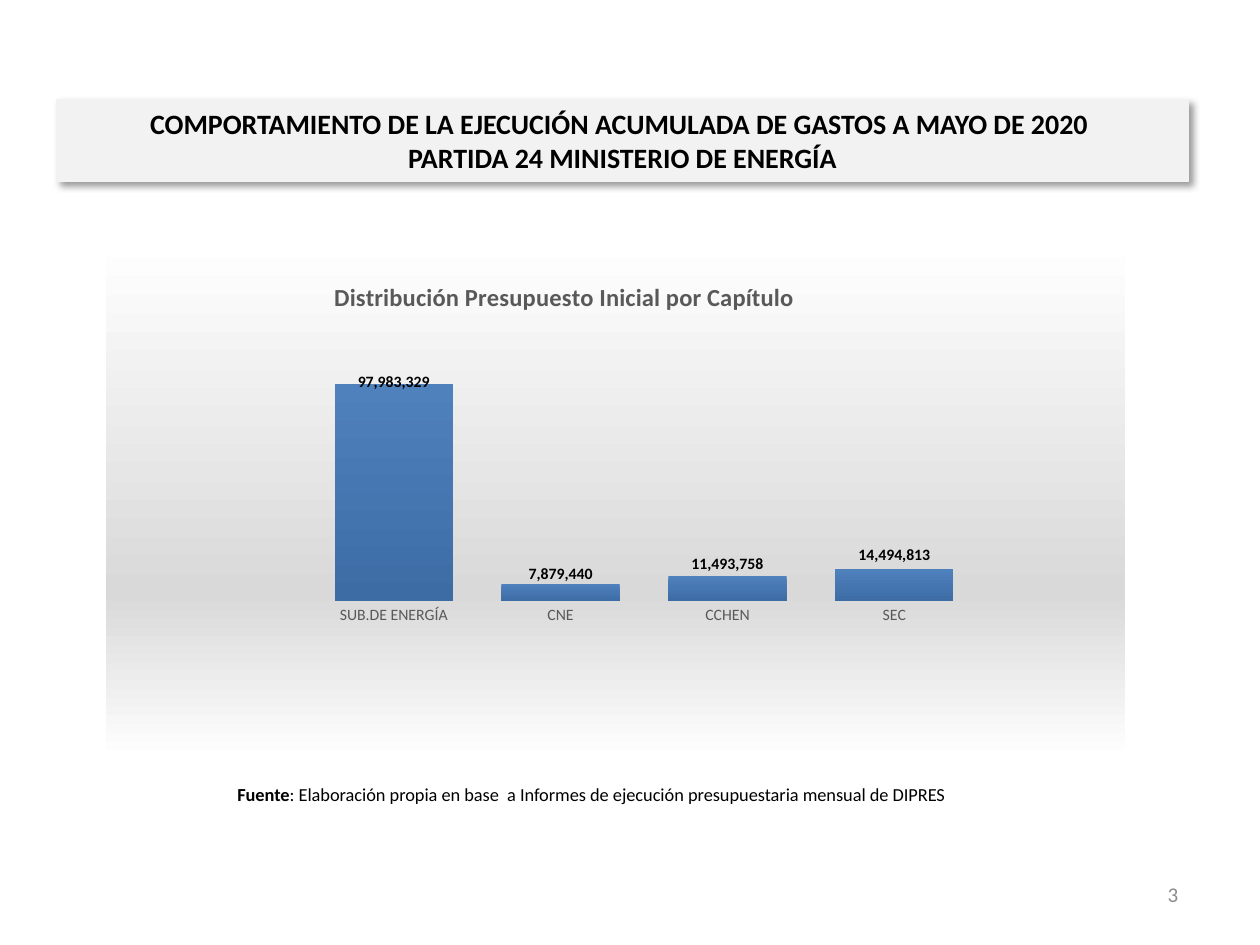
from lxml import etree
from pptx import Presentation
from pptx.chart.data import CategoryChartData
from pptx.dml.color import RGBColor
from pptx.enum.chart import XL_CHART_TYPE, XL_LABEL_POSITION, XL_TICK_MARK
from pptx.enum.shapes import MSO_SHAPE
from pptx.enum.text import MSO_ANCHOR, PP_ALIGN
from pptx.oxml import parse_xml
from pptx.oxml.ns import nsdecls, qn
from pptx.util import Inches, Pt


def style(font, size, color, bold=False):
    font.name = "Calibri"
    font.size = Pt(size)
    font.bold = bold
    font.color.rgb = RGBColor.from_string(color)


def set_layout(parent, index, **values):
    for old in parent.findall(qn("c:layout")):
        parent.remove(old)
    layout = etree.Element(qn("c:layout"))
    manual = etree.SubElement(layout, qn("c:manualLayout"))
    for tag, value in values.items():
        etree.SubElement(manual, qn(f"c:{tag}")).set("val", str(value))
    parent.insert(index, layout)


prs = Presentation()
prs.slide_width, prs.slide_height = Inches(10), Inches(7.5)
slide = prs.slides.add_slide(prs.slide_layouts[6])

heading = slide.shapes.add_shape(
    MSO_SHAPE.RECTANGLE, Inches(0.45), Inches(0.79), Inches(8.98), Inches(0.65))
heading.fill.solid()
heading.fill.fore_color.rgb = RGBColor.from_string("F2F2F2")
heading.line.color.rgb = RGBColor.from_string("F2F2F2")
heading.line.width = Pt(0.75)
heading._element.spPr.append(parse_xml(
    f'<a:effectLst {nsdecls("a")}><a:outerShdw blurRad="50800" dist="38100" dir="2700000" '
    'algn="tl" rotWithShape="0"><a:srgbClr val="000000"><a:alpha val="40000"/></a:srgbClr>'
    '</a:outerShdw></a:effectLst>'))
heading.text_frame.word_wrap = True
heading.text_frame.vertical_anchor = MSO_ANCHOR.MIDDLE
heading.text_frame.margin_left = heading.text_frame.margin_right = Inches(0.11)
heading_paragraph = heading.text_frame.paragraphs[0]
heading_paragraph.alignment = PP_ALIGN.CENTER
heading_lines = ["COMPORTAMIENTO DE LA EJECUCIÓN ACUMULADA DE GASTOS A MAYO DE 2020 ",
                 "PARTIDA 24 MINISTERIO DE ENERGÍA"]
for number, line in enumerate(heading_lines):
    if number:
        heading_paragraph.add_line_break()
    run = heading_paragraph.add_run()
    run.text = line
    style(run.font, 16, "000000", True)

captions = [
    (7.12, 6.9, 2.33, PP_ALIGN.RIGHT, 12, "8C8C8C", [("3", False)]),
    (0.98, 6.1, 7.43, PP_ALIGN.CENTER, 10.5, "000000", [
        ("Fuente", True),
        (": Elaboración propia en base  a Informes de ejecución presupuestaria mensual de DIPRES",
         False)]),
]
for left, top, width, alignment, size, color, pieces in captions:
    caption = slide.shapes.add_textbox(Inches(left), Inches(top), Inches(width), Inches(0.4))
    caption.text_frame.word_wrap = True
    caption.text_frame.vertical_anchor = MSO_ANCHOR.MIDDLE
    paragraph = caption.text_frame.paragraphs[0]
    paragraph.alignment = alignment
    for text, bold in pieces:
        run = paragraph.add_run()
        run.text = text
        style(run.font, size, color, bold)

budget = CategoryChartData(number_format="#,##0")
budget.categories = ["SUB.DE ENERGÍA", "CNE", "CCHEN", "SEC"]
budget.add_series("Series 1", [97983329, 7879440, 11493758, 14494813])
chart = slide.shapes.add_chart(
    XL_CHART_TYPE.COLUMN_CLUSTERED, Inches(0.83), Inches(1.89), Inches(8.11), Inches(4.14),
    budget).chart
style(chart.font, 10, "000000")
chart.has_legend = False
chart.has_title = True
chart_title = chart.chart_title.text_frame.paragraphs[0].add_run()
chart_title.text = "Distribución Presupuesto Inicial por Capítulo"
style(chart_title.font, 14, "595959", True)
set_layout(chart.chart_title._element, 1, xMode="edge", yMode="edge", x=0.22, y=0.07)

chart_root = chart._chartSpace
set_layout(chart_root.chart.plotArea, 0, layoutTarget="inner", xMode="edge", yMode="edge",
           x=0.201, y=0.186, w=0.654, h=0.511)
background = parse_xml(
    f'<c:spPr {nsdecls("c", "a")}><a:gradFill><a:gsLst>'
    '<a:gs pos="0"><a:srgbClr val="FFFFFF"/></a:gs>'
    '<a:gs pos="68000"><a:srgbClr val="D9D9D9"/></a:gs>'
    '<a:gs pos="100000"><a:srgbClr val="FFFFFF"/></a:gs></a:gsLst>'
    '<a:lin ang="5400000" scaled="0"/></a:gradFill>'
    '<a:ln w="9525"><a:solidFill><a:srgbClr val="FFFFFF"/></a:solidFill></a:ln></c:spPr>')
chart_root.chart.addnext(background)

chapters = chart.category_axis
chapters.major_tick_mark = XL_TICK_MARK.NONE
chapters.format.line.fill.background()
style(chapters.tick_labels.font, 9, "595959")
amounts = chart.value_axis
amounts.visible = False
amounts.has_major_gridlines = False
amounts.minimum_scale, amounts.maximum_scale = 0, 120000000

plot = chart.plots[0]
plot.gap_width = 41
plot.vary_by_categories = False
spending = plot.series[0]
bar_fill = spending.format.fill
bar_fill.gradient()
bar_fill.gradient_angle = 270
for stop, color in zip(bar_fill.gradient_stops, ["4F81BD", "3D6CA4"]):
    stop.color.rgb = RGBColor.from_string(color)

labels = spending.data_labels
labels.show_value = True
labels.number_format = "#,##0"
labels.number_format_is_linked = False
labels.position = XL_LABEL_POSITION.INSIDE_END
style(labels.font, 9, "000000", True)
label_shifts = [-0.03, -0.046, -0.05, -0.054]
for index in range(len(label_shifts)):
    label = spending.points[index].data_label
    style(label.font, 9, "000000", True)
    label.position = XL_LABEL_POSITION.INSIDE_END
for element, shift in zip(spending._element.iter(qn("c:dLbl")), label_shifts):
    set_layout(element, 1, x=0, y=shift)

prs.save("out.pptx")
